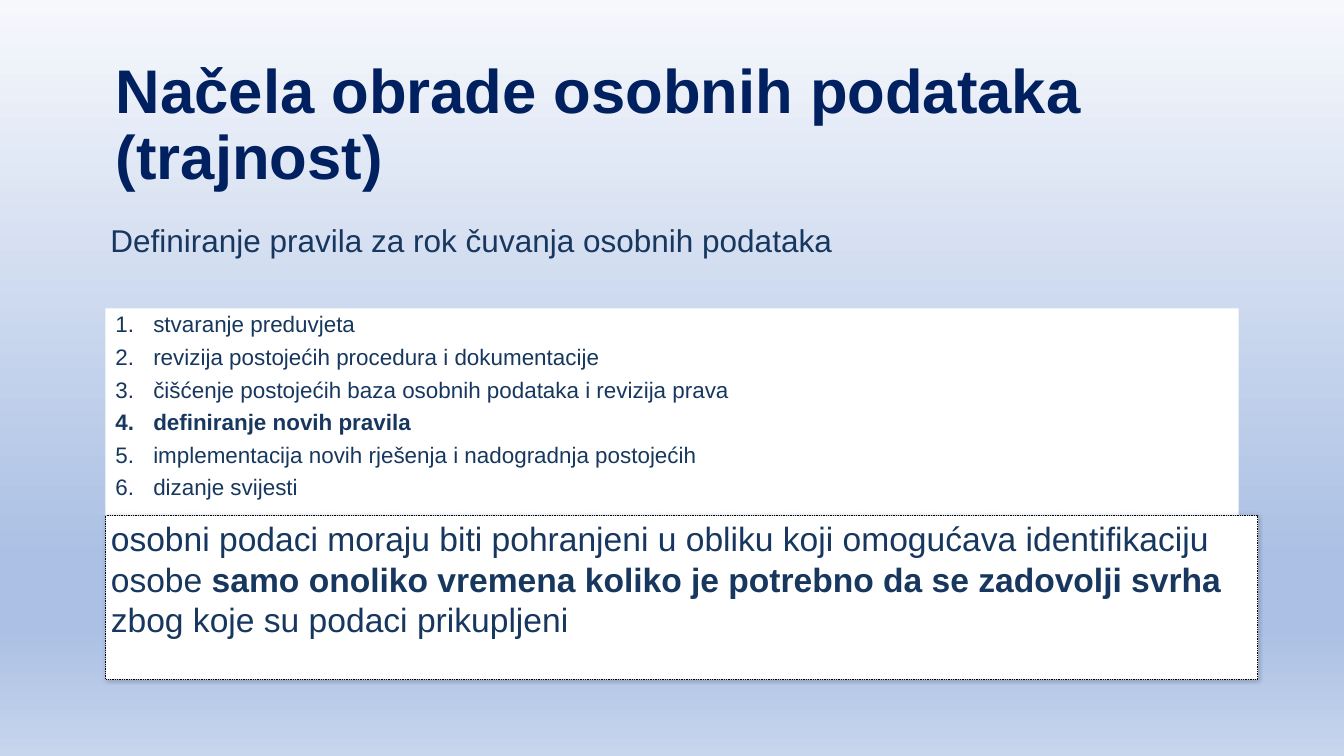
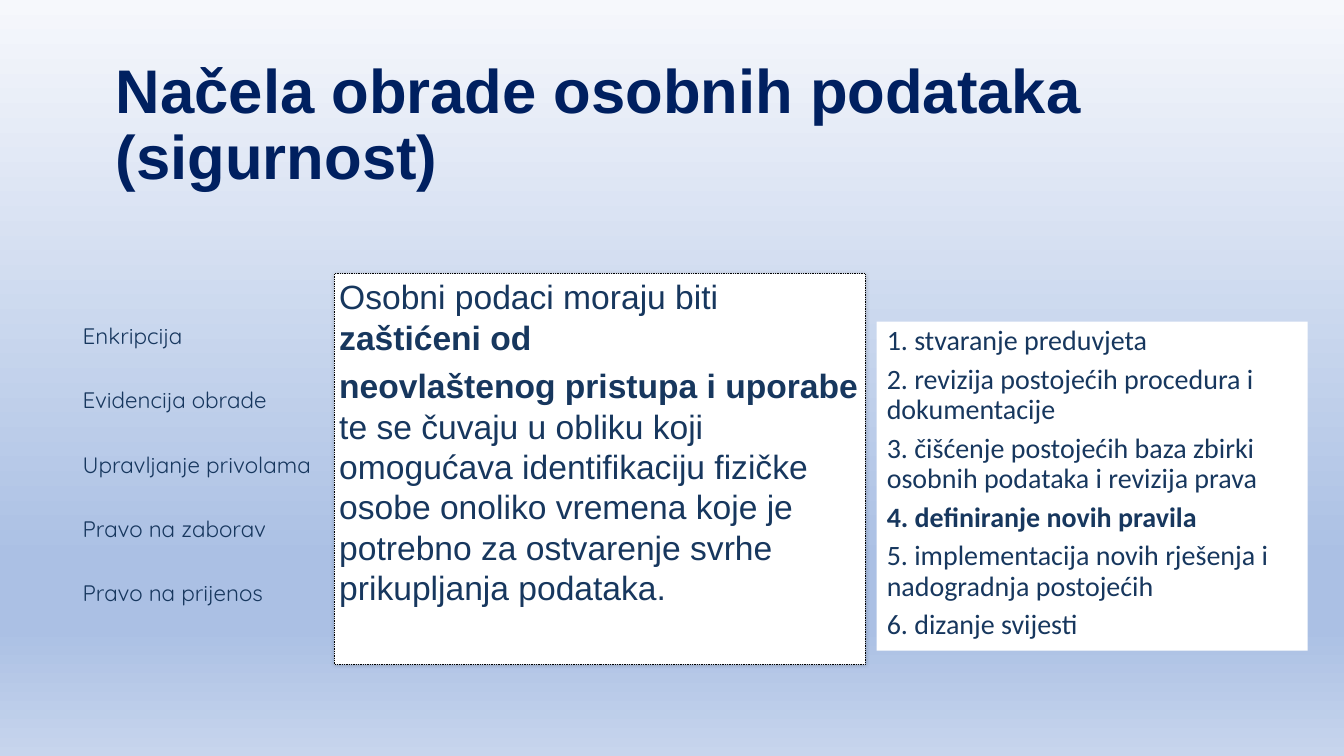
from dataclasses import dataclass

from lxml import etree
from pptx import Presentation
from pptx import util as u
from pptx.dml.color import RGBColor
from pptx.enum import dml, shapes, text
from pptx.oxml.ns import qn


@dataclass(frozen=True)
class Theme:
    title: str = "002060"
    body: str = "17375E"
    panel: str = "FFFFFF"
    border: str = "000000"
    sky: tuple = ((0, "F6F8FC"), (74, "ABC0E4"), (83, "ABC0E4"), (100, "C7D5ED"))
    font: str = "Arial"
    steps_font: str = "Calibri"
    rights_font: str = "Quicksand"
    title_pt: int = 88
    lead_pt: int = 48
    subtitle_pt: int = 45
    steps_pt: int = 40
    list_pt: int = 32


T = Theme()
WIDE = (14.4, 7.2)
NARROW = (7.2, 3.6)


def add(parent, tag, **attrs):
    return etree.SubElement(parent, qn(tag), attrs)


def paint_background(master):
    fill = master.background.fill
    fill.gradient()
    fill.gradient_angle = 270
    stops = master.element.find(".//" + qn("p:bgPr")).find(".//" + qn("a:gsLst"))
    for stop in list(stops):
        stops.remove(stop)
    for pos, color in T.sky:
        add(add(stops, "a:gs", pos=str(pos * 1000)), "a:srgbClr", val=color)


def write(sp, paras, size, font=T.font, color=T.body, bold=False, inset=NARROW,
          anchor=text.MSO_ANCHOR.TOP, spacing=0.9, after=12, numbered=False):
    """Fill a box; each paragraph is a list of (words, bold) or a plain string."""
    tf = sp.text_frame
    tf.word_wrap = True
    tf.vertical_anchor = anchor
    tf.margin_left = tf.margin_right = u.Pt(inset[0])
    tf.margin_top = tf.margin_bottom = u.Pt(inset[1])
    for i, runs in enumerate(paras):
        p = tf.add_paragraph() if i else tf.paragraphs[0]
        p.alignment = text.PP_ALIGN.LEFT
        p.line_spacing = spacing
        p.space_after = u.Pt(after)
        if numbered:
            pPr = p._p.get_or_add_pPr()
            pPr.set("marL", str(u.Pt(54)))
            pPr.set("indent", str(-u.Pt(54)))
            add(pPr, "a:buFont", typeface="+mj-lt")
            add(pPr, "a:buAutoNum", type="arabicPeriod")
        p.font.name, p.font.size = font, u.Pt(size)
        p.font.color.rgb = RGBColor.from_string(color)
        runs = [(runs, bold)] if isinstance(runs, str) else runs
        for words, strong in runs:
            r = p.add_run()
            r.text = words
            if len(runs) > 1:
                r.font.bold = strong
        if len(runs) == 1:
            p.font.bold = runs[0][1]


def textbox(s, box, paras, size, **style):
    write(s.shapes.add_textbox(*map(u.Pt, box)), paras, size, **style)


def panel(s, box):
    sp = s.shapes.add_shape(shapes.MSO_SHAPE.RECTANGLE, *map(u.Pt, box))
    sp.shadow.inherit = False
    sp.fill.solid()
    sp.fill.fore_color.rgb = RGBColor.from_string(T.panel)
    sp.line.fill.background()
    return sp


def title(s, box, words):
    textbox(s, box, [words], T.title_pt, color=T.title, bold=True, inset=WIDE,
            anchor=text.MSO_ANCHOR.BOTTOM, after=6)


def steps(s, box, items, size, **style):
    write(panel(s, box), items, size, inset=WIDE, **style)


def principle(s, box, paras):
    """White panel with dotted border and soft shadow."""
    sp = panel(s, box)
    sp.line.color.rgb = RGBColor.from_string(T.border)
    sp.line.width = u.Pt(1.25)
    sp.line.dash_style = dml.MSO_LINE.ROUND_DOT
    effects = sp._element.spPr.find(qn("a:effectLst"))
    shadow = add(effects, "a:outerShdw", blurRad=str(u.Pt(6)), dist="0",
                 dir=str(315 * 60000), algn="ctr", rotWithShape="0")
    add(add(shadow, "a:srgbClr", val=T.border), "a:alpha", val="20000")
    write(sp, paras, T.lead_pt, spacing=1.0)


def retention_slide(s):
    title(s, (151.2, 68.4, 1618.6, 214.6), "Načela obrade osobnih podataka (trajnost)")
    # Subtitle
    textbox(s, (150.5, 326.9, 1618.6, 48.2),
            ["Definiranje pravila za rok čuvanja osobnih podataka"],
            T.subtitle_pt, spacing=0.7)
    # Numbered steps
    steps(s, (150.5, 440.6, 1618.6, 295.2), [
        "stvaranje preduvjeta",
        "revizija postojećih procedura i dokumentacije",
        "čišćenje postojećih baza osobnih podataka i revizija prava",
        [("definiranje novih pravila", True)],
        "implementacija novih rješenja i nadogradnja postojećih",
        "dizanje svijesti",
    ], T.list_pt, numbered=True)
    # Principle
    principle(s, (151.2, 736.6, 1645.2, 234), [[
        ("osobni podaci moraju biti pohranjeni u obliku koji omogućava "
         "identifikaciju osobe ", False),
        ("samo onoliko vremena koliko je potrebno da se zadovolji svrha ", True),
        ("zbog koje su podaci prikupljeni", False),
    ]])


def security_slide(s):
    title(s, (151.2, 68.4, 1769, 214.6), "Načela obrade osobnih podataka (sigurnost)")
    # Measures and rights
    textbox(s, (110.9, 461.5, 402.5, 470.2), [
        "Enkripcija", "Evidencija obrade", "Upravljanje privolama",
        "Pravo na zaborav", "Pravo na prijenos",
    ], T.list_pt, font=T.rights_font, after=57)
    # Principle
    principle(s, (477.4, 391, 758.2, 558), [
        [("Osobni podaci moraju biti ", False), ("zaštićeni od", True)],
        [("neovlaštenog pristupa i uporabe ", True),
         ("te se čuvaju u obliku koji omogućava identifikaciju fizičke osobe "
          "onoliko vremena koje je potrebno za ostvarenje svrhe prikupljanja "
          "podataka.", False)],
    ])
    # Steps
    steps(s, (1252.1, 459.4, 615.6, 470.2), [
        "1. stvaranje preduvjeta",
        "2. revizija postojećih procedura i dokumentacije",
        "3. čišćenje postojećih baza zbirki osobnih podataka i revizija prava",
        [("4. definiranje novih pravila", True)],
        "5. implementacija novih rješenja i nadogradnja postojećih",
        "6. dizanje svijesti",
    ], T.steps_pt, font=T.steps_font)


def main():
    prs = Presentation()
    prs.slide_width, prs.slide_height = u.Pt(1919.52), u.Pt(1080)
    paint_background(prs.slide_master)
    for build in (retention_slide, security_slide):
        build(prs.slides.add_slide(prs.slide_layouts[6]))
    prs.save("out.pptx")


if __name__ == "__main__":
    main()
